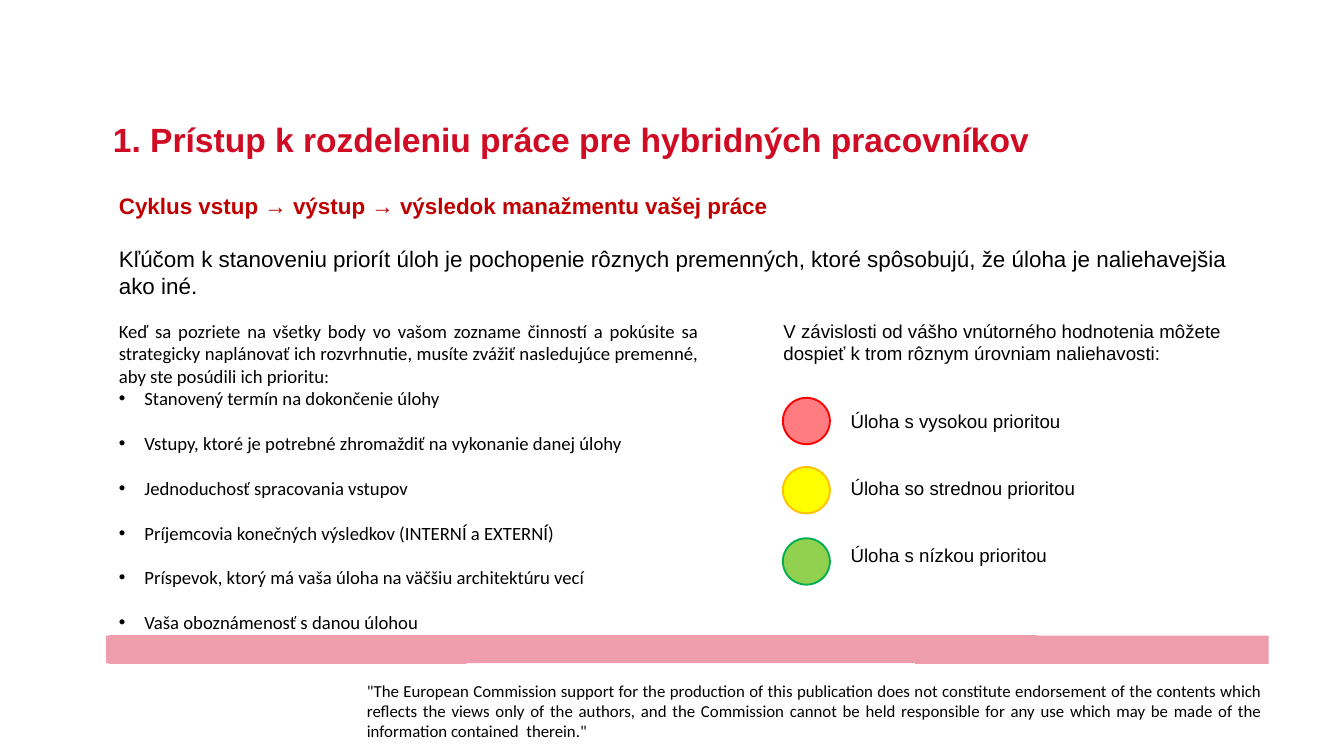
from dataclasses import dataclass

from lxml import etree
from pptx import Presentation
from pptx.dml.color import RGBColor
from pptx.enum.shapes import MSO_SHAPE
from pptx.enum.text import MSO_ANCHOR, MSO_AUTO_SIZE, PP_ALIGN
from pptx.oxml.ns import qn
from pptx.util import Inches, Pt

LEFT, JUSTIFY = PP_ALIGN.LEFT, PP_ALIGN.JUSTIFY
TOP, FIXED, OVAL = MSO_ANCHOR.TOP, MSO_AUTO_SIZE.NONE, MSO_SHAPE.OVAL


@dataclass(frozen=True)
class Theme:
    sans: str = "Arial"
    body: str = "Calibri"
    title: str = "D00B24"
    heading: str = "C00000"
    ink: str = "000000"
    band: str = "ED9DAB"
    title_size: int = 36
    lead_size: int = 24
    body_size: int = 20
    small_size: int = 18


T = Theme()
WIDTH, HEIGHT = 20, 11.25
MARGIN, COLUMN_TOP, RIGHT_COLUMN = 1.67, 4.71, 11.56
INSET = (0.1, 0.05)

TITLE = "1. Prístup k rozdeleniu práce pre hybridných pracovníkov"
HEADING = "Cyklus vstup → výstup → výsledok manažmentu vašej práce"
LEAD = ("Kľúčom k stanoveniu priorít úloh je pochopenie rôznych premenných, "
        "ktoré spôsobujú, že úloha je naliehavejšia ako iné.")
VARIABLES_INTRO = (
    "Keď sa pozriete na všetky body vo vašom zozname činností a pokúsite sa "
    "strategicky naplánovať ich rozvrhnutie, musíte zvážiť nasledujúce "
    "premenné, aby ste posúdili ich prioritu:")
VARIABLES = [
    "Stanovený termín na dokončenie úlohy",
    "Vstupy, ktoré je potrebné zhromaždiť na vykonanie danej úlohy",
    "Jednoduchosť spracovania vstupov",
    "Príjemcovia konečných výsledkov (INTERNÍ a EXTERNÍ)",
    "Príspevok, ktorý má vaša úloha na väčšiu architektúru vecí",
    "Vaša oboznámenosť s danou úlohou",
]
LEVELS_INTRO = ("V závislosti od vášho vnútorného hodnotenia môžete dospieť "
                "k trom rôznym úrovniam naliehavosti:")
# label, circle top, fill, line
LEVELS = [
    ("Úloha s vysokou prioritou", 5.92, "FF7C80", "FF0000"),
    ("Úloha so strednou prioritou", 6.95, "FFFF00", "FFC000"),
    ("Úloha s nízkou prioritou", 8.01, "92D050", "00B050"),
]
DISCLAIMER = (
    '"The European Commission support for the production of this publication '
    "does not constitute endorsement of the contents which reflects the views "
    "only of the authors, and the Commission cannot be held responsible for "
    'any use which may be made of the information contained  therein."')
BAND_OUTLINE = [
    (18.88, 9.46), (15.43, 9.46), (15.43, 9.45), (1.62, 9.45), (1.62, 9.46),
    (1.58, 9.46), (1.58, 9.87), (1.62, 9.87), (1.62, 9.88), (6.94, 9.88),
    (6.94, 9.87), (13.62, 9.87), (13.62, 9.88), (18.88, 9.88),
]


def rgb(value):
    return RGBColor.from_string(value)


def place(sp, box):
    for name, value in zip(("left", "top", "width", "height"), box):
        setattr(sp, name, Inches(value))


def indent(p, left, hanging=0, bullet=None):
    """Set the left margin, and an optional hanging bullet."""
    pPr = p._p.get_or_add_pPr()
    pPr.set("marL", str(Inches(left)))
    pPr.set("indent", str(-Inches(hanging)))
    if bullet:
        color = etree.SubElement(pPr, qn("a:buClr"))
        etree.SubElement(color, qn("a:srgbClr"), val=T.ink)
        etree.SubElement(pPr, qn("a:buFont"), typeface=T.sans)
        etree.SubElement(pPr, qn("a:buChar"), char=bullet)


def write(sp, paragraphs, font, size, inset=INSET):
    """Fill sp with (text, options) paragraphs."""
    tf = sp.text_frame
    x, y = map(Inches, inset)
    frame = dict(word_wrap=True, auto_size=FIXED, vertical_anchor=TOP,
                 margin_left=x, margin_right=x, margin_top=y, margin_bottom=y)
    for name, value in frame.items():
        setattr(tf, name, value)
    for i, (text, opts) in enumerate(paragraphs):
        p = tf.add_paragraph() if i else tf.paragraphs[0]
        r = p.add_run()
        r.text = text
        p.alignment = opts.get("align", LEFT)
        p.space_before = Pt(opts.get("before", 0))
        if "spacing" in opts:
            p.line_spacing = opts["spacing"]
        if "indent" in opts:
            indent(p, *opts["indent"])
        style = dict(name=font, size=Pt(size), bold=opts.get("bold", False))
        for name, value in style.items():
            setattr(r.font, name, value)
        r.font.color.rgb = rgb(opts.get("color", T.ink))


def add_text(slide, box, *args, **kwargs):
    write(slide.shapes.add_textbox(*map(Inches, box)), *args, **kwargs)


def paint(sp, fill, line=None):
    sp.shadow.inherit = False
    sp.fill.solid()
    sp.fill.fore_color.rgb = rgb(fill)
    if line:
        sp.line.color.rgb = rgb(line)
        sp.line.width = Pt(2)
    else:
        sp.line.fill.background()


def main():
    prs = Presentation()
    prs.slide_width, prs.slide_height = Inches(WIDTH), Inches(HEIGHT)
    slide = prs.slides.add_slide(prs.slide_layouts[5])

    start, *corners = [(Inches(x), Inches(y)) for x, y in BAND_OUTLINE]
    builder = slide.shapes.build_freeform(*start)
    builder.add_line_segments(corners, close=True)
    paint(builder.convert_to_shape(), T.band)

    add_text(slide, (5.45, 10.15, 13.33, 0.76),
             [(DISCLAIMER, dict(align=JUSTIFY, spacing=0.98, indent=(0.01,)))],
             T.body, T.small_size, inset=(0, 0))

    title = slide.shapes.title
    place(title, (1.58, 1.72, 15.13, 0.71))
    write(title, [(TITLE, dict(bold=True, color=T.title))],
          T.sans, T.title_size)

    add_text(slide, (MARGIN, 2.81, 17.11, 1.72),
             [(HEADING, dict(bold=True, color=T.heading)),
              (LEAD, dict(before=28))], T.sans, T.lead_size)

    bullets = [(text, dict(align=JUSTIFY, before=24 if i else 0,
                           indent=(0.38, 0.38, "•")))
               for i, text in enumerate(VARIABLES)]
    add_text(slide, (MARGIN, COLUMN_TOP, 8.82, 4.81),
             [(VARIABLES_INTRO, dict(align=JUSTIFY)), *bullets],
             T.body, T.body_size)

    labels = [(label, dict(before=48, indent=(1,))) for label, *_ in LEVELS]
    add_text(slide, (RIGHT_COLUMN, COLUMN_TOP, 7.67, 3.8),
             [(LEVELS_INTRO, {}), *labels], T.sans, T.body_size)

    for _, top, fill, line in LEVELS:
        box = (RIGHT_COLUMN + 0.09, top, 0.7, 0.69)
        paint(slide.shapes.add_shape(OVAL, *map(Inches, box)), fill, line)

    prs.save("out.pptx")


if __name__ == "__main__":
    main()
